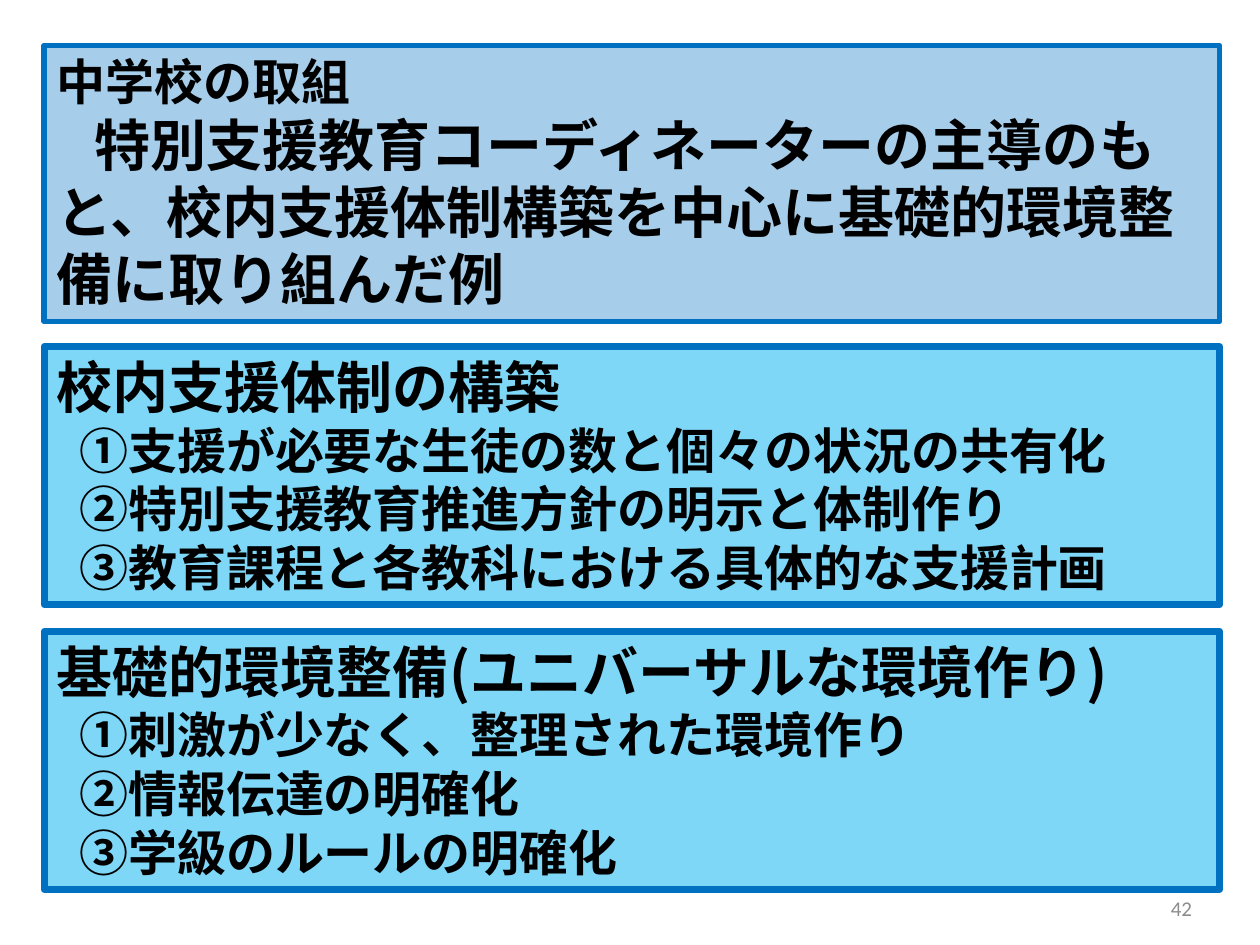
from lxml import etree
from pptx import Presentation
from pptx.dml.color import RGBColor
from pptx.enum.text import MSO_ANCHOR, MSO_AUTO_SIZE, PP_ALIGN
from pptx.oxml.ns import qn
from pptx.util import Inches, Pt

TOP, MIDDLE = MSO_ANCHOR.TOP, MSO_ANCHOR.MIDDLE
LEFT, RIGHT = PP_ALIGN.LEFT, PP_ALIGN.RIGHT
NO_AUTOFIT = MSO_AUTO_SIZE.NONE
TWO_CONTENT_LAYOUT = 3
PANEL_FONT, NUMBER_FONT = "Noto Sans CJK JP", "Calibri"
BLACK, GRAY, BLUE, SKY = "000000", "8C8C8C", "0070C0", "00B0F0"
PANEL_LEFT, PANEL_WIDTH = 0.35, 9.33
LIST_INDENT, LEAD_INDENT = 0.18, 0.3

# Each paragraph: text, size in points, first-line indent in inches.
SUMMARY = [
    ("中学校の取組", 28, 0),
    ("特別支援教育コーディネーターの主導のもと、校内支援体制構築を中心に"
     "基礎的環境整備に取り組んだ例", 32, LEAD_INDENT),
]
SUPPORT_SYSTEM = ("校内支援体制の構築", [
    "①支援が必要な生徒の数と個々の状況の共有化",
    "②特別支援教育推進方針の明示と体制作り",
    "➂教育課程と各教科における具体的な支援計画",
])
ENVIRONMENT = ("基礎的環境整備(ユニバーサルな環境作り)", [
    "①刺激が少なく、整理された環境作り",
    "②情報伝達の明確化",
    "➂学級のルールの明確化",
])


def color(value):
    """Turn a hex string into a colour."""
    return RGBColor.from_string(value)


def format_run(run, size, font_name, font_color, bold):
    """Set the font of a run for Latin and East Asian text."""
    run.font.size = Pt(size)
    run.font.name = font_name
    run.font.bold = bold
    run.font.color.rgb = color(font_color)
    east_asian = etree.SubElement(run.font._element, qn("a:ea"))
    east_asian.set("typeface", font_name)


def format_paragraph(paragraph, indent):
    """Remove the bullet and spacing, and indent the first line."""
    paragraph.alignment = LEFT
    paragraph.space_before = Pt(0)
    paragraph.line_spacing = 1.0
    properties = paragraph._p.get_or_add_pPr()
    properties.set("marL", "0")
    properties.set("indent", str(Inches(indent)))
    etree.SubElement(properties, qn("a:buNone"))


def list_paragraphs(heading, items):
    """Give a heading and its items their sizes and indents."""
    return [(heading, 32, 0)] + [(item, 28, LIST_INDENT) for item in items]


def style_panel(shape, fill_color, opacity, line_width):
    """Give a panel a translucent fill and a blue border."""
    shape.fill.solid()
    shape.fill.fore_color.rgb = color(fill_color)
    fill = shape._element.spPr.find(qn("a:solidFill"))
    alpha = etree.SubElement(fill[0], qn("a:alpha"))
    alpha.set("val", str(opacity * 1000))
    shape.line.color.rgb = color(BLUE)
    shape.line.width = Pt(line_width)


def fill_panel(shape, top, height, paragraphs):
    """Place a placeholder and write its paragraphs."""
    shape.left, shape.top = Inches(PANEL_LEFT), Inches(top)
    shape.width, shape.height = Inches(PANEL_WIDTH), Inches(height)
    text_frame = shape.text_frame
    text_frame.text = "\n".join(text for text, _, _ in paragraphs)
    text_frame.word_wrap = True
    text_frame.auto_size = NO_AUTOFIT
    text_frame.vertical_anchor = TOP
    for paragraph, (_, size, indent) in zip(text_frame.paragraphs, paragraphs):
        format_paragraph(paragraph, indent)
        format_run(paragraph.runs[0], size, PANEL_FONT, BLACK, True)


def add_page_number(slide, number):
    """Add the page number at the bottom right."""
    shape = slide.shapes.add_textbox(
        Inches(7.03), Inches(7.01), Inches(2.53), Inches(0.4))
    text_frame = shape.text_frame
    text_frame.word_wrap = True
    text_frame.vertical_anchor = MIDDLE
    text_frame.text = number
    paragraph = text_frame.paragraphs[0]
    paragraph.alignment = RIGHT
    format_run(paragraph.runs[0], 12, NUMBER_FONT, GRAY, False)


def main():
    """Build the slide and save it."""
    presentation = Presentation()
    presentation.slide_width, presentation.slide_height = Inches(10), Inches(7.5)
    layout = presentation.slide_layouts[TWO_CONTENT_LAYOUT]
    slide = presentation.slides.add_slide(layout)
    title, support, environment = list(slide.placeholders)[:3]

    fill_panel(title, 0.36, 2.19, SUMMARY)
    style_panel(title, BLUE, 35, 3)
    lists = [(support, 2.75, SUPPORT_SYSTEM), (environment, 5.01, ENVIRONMENT)]
    for shape, top, (heading, items) in lists:
        fill_panel(shape, top, 2.05, list_paragraphs(heading, items))
        style_panel(shape, SKY, 50, 4)

    add_page_number(slide, "42")
    presentation.save("out.pptx")


if __name__ == "__main__":
    main()
